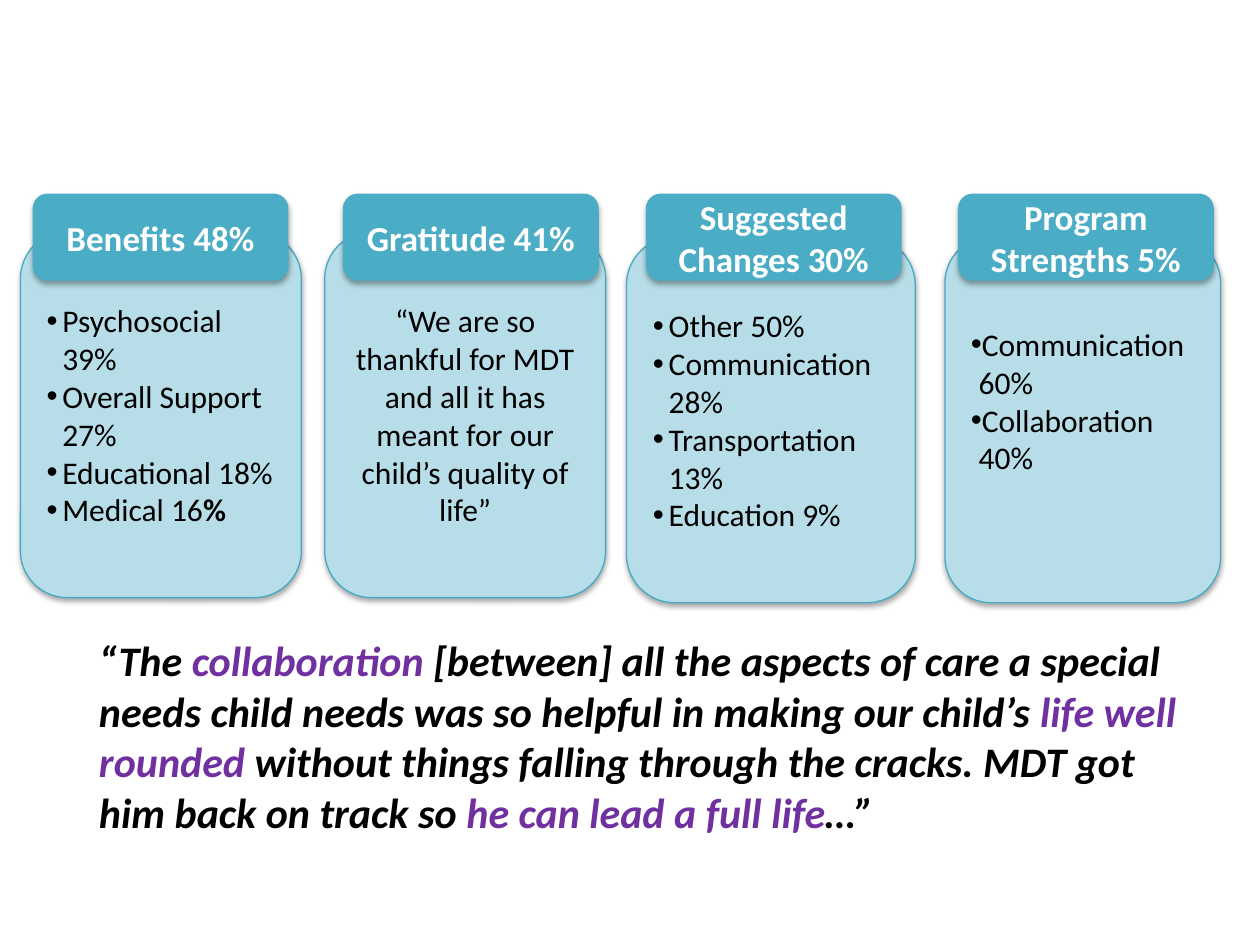
"""Build a slide of four survey theme cards above a parent quote."""
from dataclasses import dataclass

import pptx
import pptx.dml.color
import pptx.enum.shapes
import pptx.enum.text
import pptx.oxml
import pptx.oxml.ns
import pptx.util
from lxml import etree

Pt = pptx.util.Pt
Shape = pptx.enum.shapes.MSO_SHAPE
Align = pptx.enum.text.PP_ALIGN
qn = pptx.oxml.ns.qn

Run = tuple[str, bool]
TOP, HEAD_W, HEAD_H, CARD_H = 111, 145.5, 49, 209
BLACK, WHITE, TEAL, PURPLE = "000000", "FFFFFF", "4BACC6", "7030A0"
SHADOW = (
    '<a:effectLst xmlns:a="http://schemas.openxmlformats.org/drawingml/2006/main">'
    '<a:outerShdw blurRad="40000" dist="23000" dir="5400000" rotWithShape="0">'
    '<a:srgbClr val="000000"><a:alpha val="35000"/></a:srgbClr>'
    '</a:outerShdw></a:effectLst>'
)


@dataclass
class Card:
    title: str
    lines: list[list[Run]]
    left: float
    top: float
    width: float
    head: float
    hang: float = 9
    base: float = 3.6


CARDS = [
    Card("Benefits 48%",
         [[("Psychosocial 39%", False)], [("Overall Support 27%", False)],
          [("Educational 18%", False)], [("Medical 16", False), ("%", True)]],
         11.7, 132.5, 160.5, 19),
    Card("Gratitude 41%",
         [[("“We are so thankful for MDT and all it has meant for our "
            "child’s quality of life”", False)]],
         185.6, 132.5, 160.5, 196.3, hang=0),
    Card("Suggested Changes 30%",
         [[("Other 50%", False)], [("Communication 28%", False)],
          [("Transportation 13%", False)], [("Education 9%", False)]],
         358, 135.4, 165, 369.4),
    Card("Program Strengths 5%",
         [[("Communication 60%", False)], [("Collaboration 40%", False)]],
         540, 135.4, 157.5, 547.8, hang=4.5, base=25.5),
]

QUOTE = [
    ("“The ", BLACK),
    ("collaboration", PURPLE),
    (" [between] all the aspects of care a special needs child needs "
     "was so helpful in making our child’s ", BLACK),
    ("life well rounded ", PURPLE),
    ("without things falling through the cracks. MDT got him back on track so ",
     BLACK),
    ("he can lead a full life", PURPLE),
    ("…”", BLACK),
]


def hue(code: str) -> pptx.dml.color.RGBColor:
    return pptx.dml.color.RGBColor.from_string(code)


def add_run(para, text: str, size: float, code: str,
            bold: bool = False, slant: bool = False) -> None:
    run = para.add_run()
    run.text = text
    font = run.font
    font.name, font.size, font.bold, font.italic = "Calibri", Pt(size), bold, slant
    font.color.rgb = hue(code)


def add_box(slide, left: float, top: float, width: float, height: float,
            fill: str, line: str):
    box = slide.shapes.add_shape(
        Shape.ROUNDED_RECTANGLE, Pt(left), Pt(top), Pt(width), Pt(height))
    box.fill.solid()
    box.fill.fore_color.rgb = hue(fill)
    box.line.color.rgb = hue(line)
    box.line.width = Pt(0.75)
    box._element.spPr.append(pptx.oxml.parse_xml(SHADOW))
    box.text_frame.word_wrap = True
    box.text_frame.vertical_anchor = pptx.enum.text.MSO_ANCHOR.MIDDLE
    return box


def set_mark(para, hang: float) -> None:
    props = para._p.get_or_add_pPr()
    props.set("marL", str(Pt(hang)))
    props.set("indent", str(-Pt(hang)))
    etree.SubElement(props, qn("a:buFont")).set("typeface", "Arial")
    etree.SubElement(props, qn("a:buChar")).set("char", "•")


def add_body(slide, card: Card) -> None:
    box = add_box(slide, card.left, card.top, card.width, CARD_H,
                  "B7DEE8", "46AAC5")
    frame = box.text_frame
    frame.margin_bottom = Pt(card.base)
    for i, line in enumerate(card.lines):
        para = frame.add_paragraph() if i else frame.paragraphs[0]
        para.alignment = Align.LEFT if card.hang else Align.CENTER
        if card.hang:
            set_mark(para, card.hang)
        for text, bold in line:
            add_run(para, text, 18, BLACK, bold)


def add_head(slide, card: Card) -> None:
    box = add_box(slide, card.head, TOP, HEAD_W, HEAD_H, TEAL, TEAL)
    para = box.text_frame.paragraphs[0]
    para.alignment = Align.CENTER
    add_run(para, card.title, 20, WHITE, True)


def add_quote(slide) -> None:
    box = slide.shapes.add_textbox(Pt(49.5), Pt(359.3), Pt(648), Pt(123.6))
    box.text_frame.word_wrap = True
    para = box.text_frame.paragraphs[0]
    for text, code in QUOTE:
        add_run(para, text, 24, code, True, True)


def main() -> None:
    deck = pptx.Presentation()
    deck.slide_width, deck.slide_height = Pt(720), Pt(540)
    slide = deck.slides.add_slide(deck.slide_layouts[6])
    add_quote(slide)
    for card in CARDS:
        add_body(slide, card)
    for card in CARDS:
        add_head(slide, card)
    deck.save("out.pptx")


if __name__ == "__main__":
    main()
